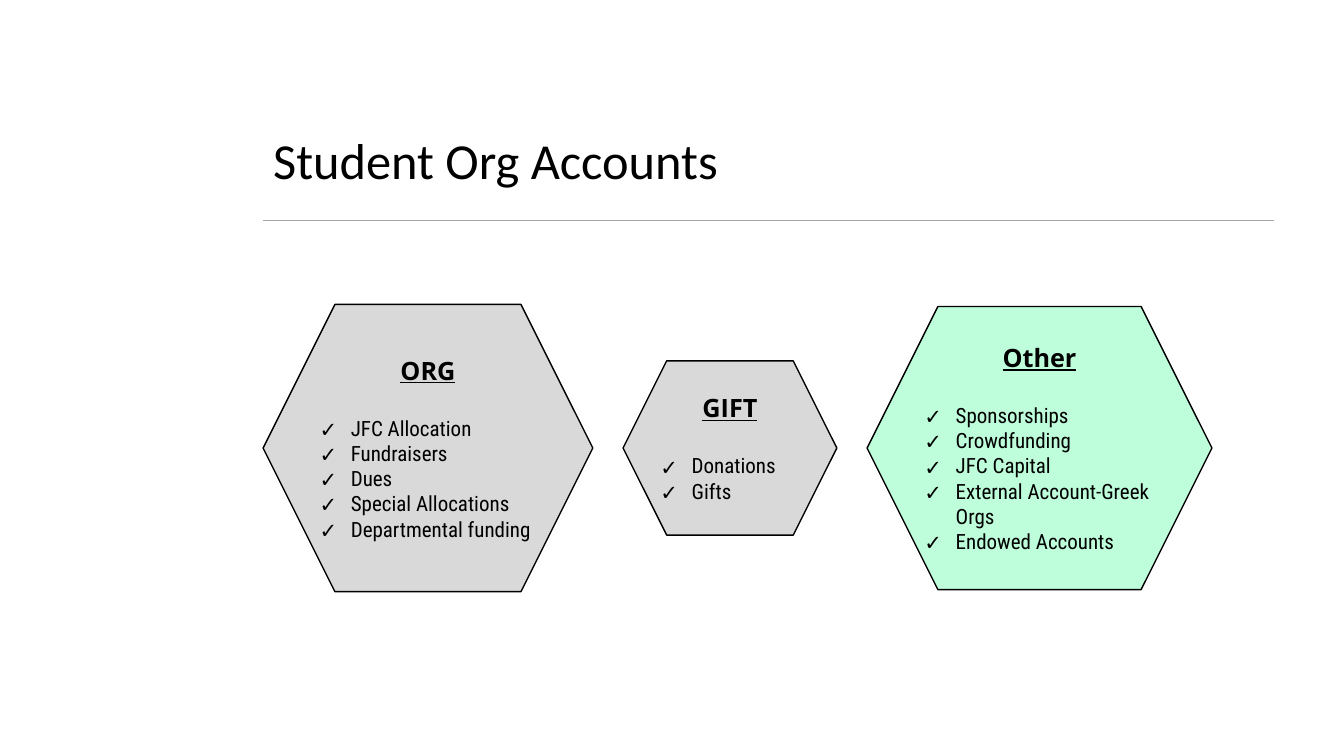
from dataclasses import dataclass

from lxml.etree import SubElement
from pptx import Presentation
from pptx.dml.color import RGBColor
from pptx.enum.shapes import MSO_CONNECTOR as Link, MSO_SHAPE as Shape
from pptx.enum.text import MSO_ANCHOR as Anchor, MSO_AUTO_SIZE as Fit, PP_ALIGN as Align
from pptx.oxml.ns import qn
from pptx.slide import Slide
from pptx.text.text import _Paragraph as Para
from pptx.util import Inches, Pt

BLACK = "000000"
GREY = "D9D9D9"
MINT = "BEFEDB"


@dataclass
class Account:
    name: str
    left: float
    top: float
    width: float
    height: float
    fill: str
    items: list[str]


ACCOUNTS = [
    Account("GIFT", 6.18, 3.58, 2.12, 1.73, GREY, ["Donations", "Gifts"]),
    Account("ORG", 2.61, 3.02, 3.27, 2.85, GREY,
            ["JFC Allocation", "Fundraisers", "Dues", "Special Allocations",
             "Departmental funding"]),
    Account("Other", 8.6, 3.04, 3.42, 2.81, MINT,
            ["Sponsorships", "Crowdfunding", "JFC Capital",
             "External Account-Greek Orgs", "Endowed Accounts"]),
]


def color(code: str) -> RGBColor:
    return RGBColor.from_string(code)


def add_text(para: Para, text: str, face: str, size: float, strong: bool = False) -> None:
    run = para.add_run()
    run.text = text
    font = run.font
    font.name = face
    font.size = Pt(size)
    font.bold = strong
    font.underline = strong
    font.color.rgb = color(BLACK)


def add_check(para: Para) -> None:
    props = para._p.get_or_add_pPr()
    props.set("marL", str(Inches(0.31)))
    props.set("indent", str(-Inches(0.31)))
    SubElement(props, qn("a:buFont"), typeface="Noto Sans Symbols")
    SubElement(props, qn("a:buChar"), char="✓")


def add_title(slide: Slide, text: str) -> None:
    title = slide.shapes.title
    title.left, title.top = Inches(2.61), Inches(1.26)
    title.width, title.height = Inches(6.43), Inches(0.71)
    frame = title.text_frame
    frame.auto_size = Fit.NONE
    frame.word_wrap = True
    frame.vertical_anchor = Anchor.MIDDLE
    para = frame.paragraphs[0]
    para.alignment = Align.LEFT
    para.line_spacing = 0.9
    add_text(para, text, "Calibri", 36)


def add_rule(slide: Slide) -> None:
    rule = slide.shapes.add_connector(
        Link.STRAIGHT, Inches(2.61), Inches(2.19), Inches(12.64), Inches(2.19))
    rule.line.color.rgb = color("A6A6A6")
    rule.line.width = Pt(1)
    SubElement(rule._element.spPr, qn("a:effectLst"))


def add_account(slide: Slide, account: Account) -> None:
    box = slide.shapes.add_shape(
        Shape.HEXAGON, Inches(account.left), Inches(account.top),
        Inches(account.width), Inches(account.height))
    box.shadow.inherit = False
    box.fill.solid()
    box.fill.fore_color.rgb = color(account.fill)
    box.line.color.rgb = color(BLACK)
    box.line.width = Pt(1)
    frame = box.text_frame
    frame.word_wrap = True
    frame.vertical_anchor = Anchor.MIDDLE
    frame.margin_left = frame.margin_right = Inches(0.05)
    frame.margin_top = frame.margin_bottom = Inches(0.05)
    head = frame.paragraphs[0]
    head.alignment = Align.CENTER
    add_text(head, account.name, "Open Sans", 18, strong=True)
    for index, item in enumerate(account.items):
        para = frame.add_paragraph()
        para.alignment = Align.LEFT
        add_check(para)
        para.space_before = Pt(0 if index else 21.5)
        add_text(para, item, "Roboto Condensed", 15)


def main() -> None:
    deck = Presentation()
    deck.slide_width = Inches(13.33)
    deck.slide_height = Inches(7.5)
    slide = deck.slides.add_slide(deck.slide_layouts.get_by_name("Title Only"))
    add_title(slide, "Student Org Accounts")
    add_rule(slide)
    for account in ACCOUNTS:
        add_account(slide, account)
    deck.save("out.pptx")


if __name__ == "__main__":
    main()
